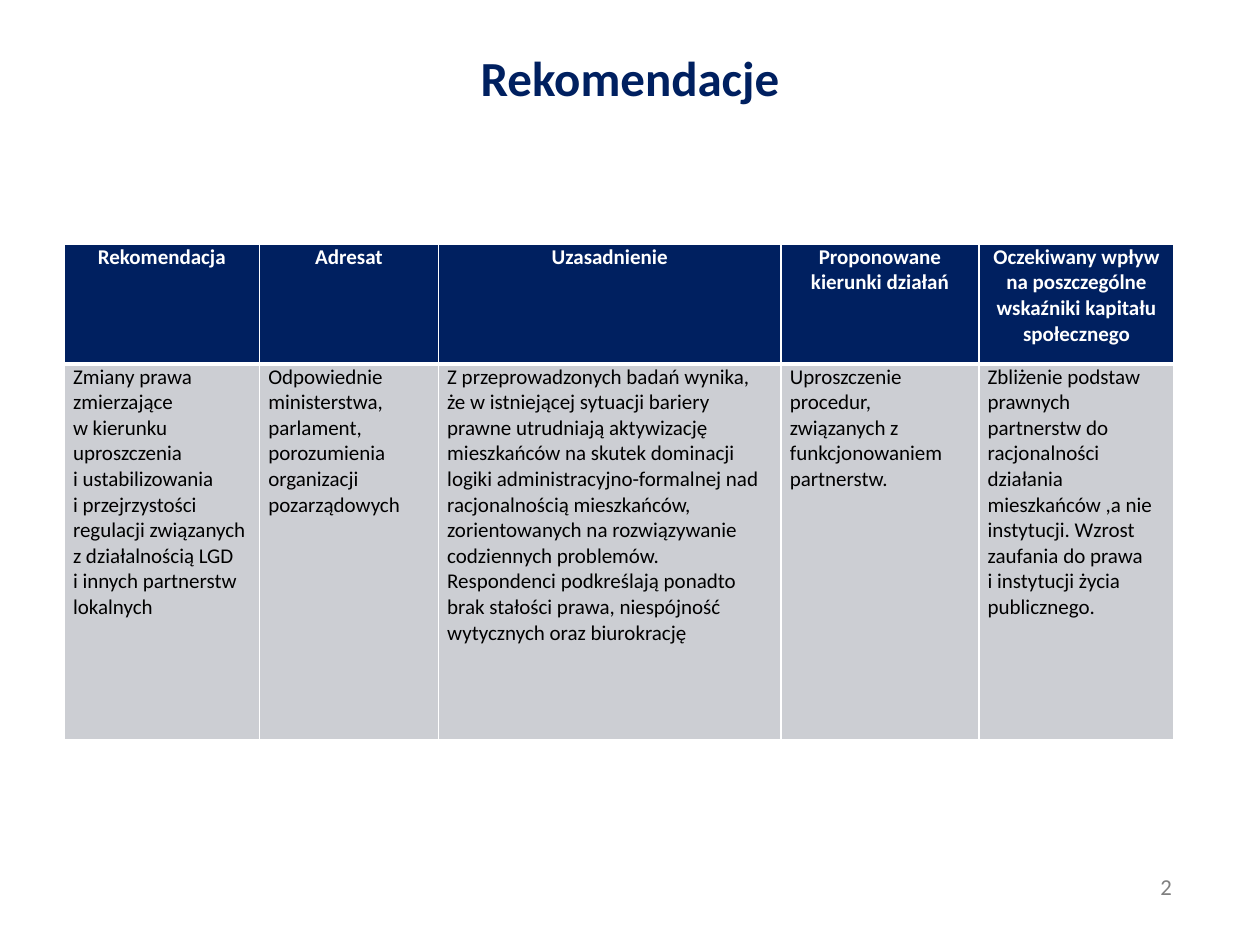
"""Build the recommendations slide with its table."""
import copy

import lxml.etree
import pptx
import pptx.dml.color
import pptx.enum.text
import pptx.oxml.ns
import pptx.util

Inches = pptx.util.Inches
Pt = pptx.util.Pt
CENTER = pptx.enum.text.PP_ALIGN.CENTER
LEFT = pptx.enum.text.PP_ALIGN.LEFT

NAVY, GRAY, WHITE, BLACK = "002060", "CCCED3", "FFFFFF", "000000"
COLUMN_WIDTHS = [1.55, 1.42, 2.72, 1.57, 1.55]
ROW_HEIGHTS = [0.95, 2.98]
HEADINGS = [
    "Rekomendacja",
    "Adresat",
    "Uzasadnienie",
    "Proponowane kierunki działań",
    "Oczekiwany wpływ na poszczególne wskaźniki kapitału społecznego",
]
DETAILS = [
    "Zmiany prawa zmierzające \nw kierunku uproszczenia \ni ustabilizowania \n"
    "i przejrzystości regulacji związanych z działalnością LGD \n"
    "i innych partnerstw lokalnych",
    "Odpowiednie ministerstwa, parlament, porozumienia organizacji pozarządowych",
    "Z przeprowadzonych badań wynika, że w istniejącej sytuacji bariery prawne "
    "utrudniają aktywizację mieszkańców na skutek dominacji logiki "
    "administracyjno-formalnej nad racjonalnością mieszkańców, zorientowanych na "
    "rozwiązywanie codziennych problemów. Respondenci podkreślają ponadto brak "
    "stałości prawa, niespójność wytycznych oraz biurokrację",
    "Uproszczenie procedur, związanych z funkcjonowaniem partnerstw.",
    "Zbliżenie podstaw prawnych partnerstw do racjonalności działania mieszkańców "
    ",a nie instytucji. Wzrost zaufania do prawa \ni instytucji życia publicznego.",
]


def color(value):
    """Turn a hex string into a colour."""
    return pptx.dml.color.RGBColor.from_string(value)


def set_values(target, values):
    """Set every attribute named in the dict of values."""
    for name, value in values.items():
        setattr(target, name, value)


def write_text(para, text, size, ink, bold=False, **layout):
    """Write formatted text, with line breaks of the same size."""
    para.text = text
    set_values(para, layout)
    for span in para.runs:
        set_values(span.font, {"name": "Calibri", "size": Pt(size), "bold": bold})
        span.font.color.rgb = color(ink)
    properties = para.runs[0].font._element
    for line_break in para._p.findall(pptx.oxml.ns.qn("a:br")):
        line_break.append(copy.deepcopy(properties))


def add_text(page, text, left, top, width, height, margin_top, **style):
    """Add a centred text box."""
    box = page.shapes.add_textbox(*map(Inches, (left, top, width, height)))
    set_values(box.text_frame, {"word_wrap": True, "margin_top": Inches(margin_top)})
    write_text(box.text_frame.paragraphs[0], text, alignment=CENTER, **style)


def set_borders(cell, widths):
    """Draw white cell borders with the given widths in points."""
    properties = cell._tc.get_or_add_tcPr()
    for side, width in widths.items():
        line = lxml.etree.SubElement(
            properties, pptx.oxml.ns.qn(f"a:ln{side}"), w=str(Pt(width)))
        fill = lxml.etree.SubElement(line, pptx.oxml.ns.qn("a:solidFill"))
        lxml.etree.SubElement(fill, pptx.oxml.ns.qn("a:srgbClr"), val=WHITE)


def fill_row(table, row, texts, background, borders, **style):
    """Fill one table row with texts, background and borders."""
    for column, text in enumerate(texts):
        cell = table.cell(row, column)
        set_values(cell, {"margin_left": Inches(0.07), "margin_right": Inches(0.07),
                          "margin_top": 0, "margin_bottom": 0})
        set_borders(cell, borders)
        cell.fill.solid()
        cell.fill.fore_color.rgb = color(background)
        write_text(cell.text_frame.paragraphs[0], text, size=12,
                   space_after=Pt(8), **style)


def add_recommendations(page):
    """Add the table of recommendations."""
    table = page.shapes.add_table(
        len(ROW_HEIGHTS), len(COLUMN_WIDTHS), Inches(0.51), Inches(1.94),
        Inches(sum(COLUMN_WIDTHS)), Inches(sum(ROW_HEIGHTS))).table
    set_values(table, {"first_row": True, "horz_banding": False})
    for column, width in zip(table.columns, COLUMN_WIDTHS):
        column.width = Inches(width)
    for row, height in zip(table.rows, ROW_HEIGHTS):
        row.height = Inches(height)
    fill_row(table, 0, HEADINGS, NAVY, {"L": 1, "R": 1, "T": 1, "B": 3},
             ink=WHITE, bold=True, alignment=CENTER)
    fill_row(table, 1, DETAILS, GRAY, {"L": 1, "R": 1, "T": 3, "B": 1},
             ink=BLACK, alignment=LEFT)


def main():
    """Build and save the deck."""
    deck = pptx.Presentation()
    set_values(deck, {"slide_width": Inches(10), "slide_height": Inches(7.5)})
    page = deck.slides.add_slide(deck.slide_layouts[6])
    add_text(page, "2", 8.86, 6.88, 0.79, 0.32, 0.05, size=13, ink="808080")
    add_recommendations(page)
    add_text(page, "Rekomendacje", 0.5, 0.3, 9, 0.93, 0.08,
             size=28, ink=NAVY, bold=True)
    deck.save("out.pptx")


if __name__ == "__main__":
    main()
